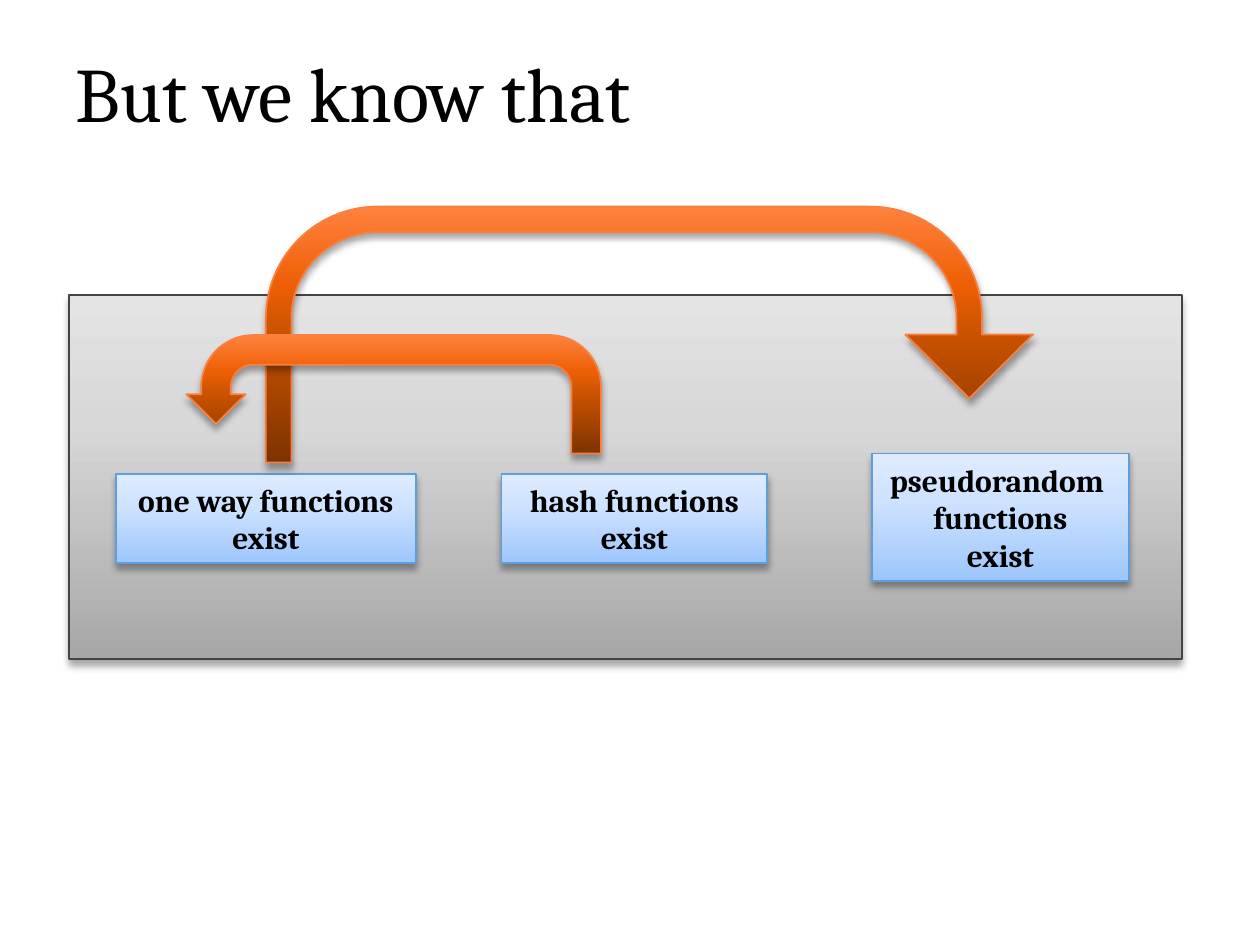
import dataclasses

import lxml.etree
import pptx
import pptx.dml.color
import pptx.enum.shapes
import pptx.enum.text
import pptx.oxml.ns
import pptx.util

Inches = pptx.util.Inches
Pt = pptx.util.Pt
Shape = pptx.enum.shapes.MSO_SHAPE
qn = pptx.oxml.ns.qn


@dataclasses.dataclass(frozen=True)
class Theme:
    font: str = "Cambria"
    title_size: int = 44
    label_size: int = 18
    text: str = "000000"
    shadow: str = "000000"
    panel: tuple = ("444444", ((0, "A7A7A7"), (65, "D8D8D8"), (100, "E4E4E4")))
    label: tuple = ("5F9EDD", ((0, "9DC6FB"), (65, "CFE3FF"), (100, "DEEBFF")))
    arrow: tuple = ("F88040", ((0, "7D3300"), (50, "CA5200"), (70, "EE6007"), (100, "FF823D")))


THEME = Theme()


def rgb(value):
    return pptx.dml.color.RGBColor.from_string(value)


def apply(target, values):
    for name, value in values.items():
        setattr(target, name, value)


def add_child(parent, tag, **attributes):
    child = lxml.etree.SubElement(parent, qn(tag))
    for name, value in attributes.items():
        child.set(name, str(value))
    return child


def fill_gradient(shape, stops):
    shape.fill.gradient()
    gradient = shape._element.spPr.find(qn("a:gradFill"))
    stop_list = gradient.find(qn("a:gsLst"))
    for stop in list(stop_list):
        stop_list.remove(stop)
    for position, color in stops:
        stop = add_child(stop_list, "a:gs", pos=position * 1000)
        add_child(stop, "a:srgbClr", val=color)
    gradient.find(qn("a:lin")).set("ang", str(270 * 60000))


def add_shadow(shape):
    shape.shadow.inherit = False
    effects = shape._element.spPr.find(qn("a:effectLst"))
    shadow = add_child(effects, "a:outerShdw", blurRad=Pt(4), dist=Pt(3),
                       dir=90 * 60000, rotWithShape=0)
    color = add_child(shadow, "a:srgbClr", val=THEME.shadow)
    add_child(color, "a:alpha", val=35000)


def add_glossy_shape(page, kind, bounds, style):
    line_color, stops = style
    shape = page.shapes.add_shape(kind, *map(Inches, bounds))
    fill_gradient(shape, stops)
    shape.line.color.rgb = rgb(line_color)
    shape.line.width = Pt(1)
    add_shadow(shape)
    return shape


def write_text(box, text, size, bold, frame_format, para_format):
    apply(box.text_frame, frame_format)
    para = box.text_frame.paragraphs[0]
    para.text = text
    apply(para, para_format)
    for span in para.runs:
        apply(span.font, {"name": THEME.font, "size": Pt(size), "bold": bold})
        span.font.color.rgb = rgb(THEME.text)


def set_title(page, text):
    title = page.shapes.title
    apply(title, {"left": Inches(0.5), "top": Inches(0.3),
                  "width": Inches(9), "height": Inches(0.95)})
    write_text(title, text, THEME.title_size, False,
               {"vertical_anchor": pptx.enum.text.MSO_ANCHOR.MIDDLE,
                "auto_size": pptx.enum.text.MSO_AUTO_SIZE.NONE},
               {"alignment": pptx.enum.text.PP_ALIGN.LEFT, "line_spacing": 0.9})


def add_label(page, text, bounds):
    box = add_glossy_shape(page, Shape.RECTANGLE, bounds, THEME.label)
    write_text(box, text, THEME.label_size, True,
               {"word_wrap": True,
                "auto_size": pptx.enum.text.MSO_AUTO_SIZE.SHAPE_TO_FIT_TEXT},
               {"alignment": pptx.enum.text.PP_ALIGN.CENTER})


def add_uturn_arrow(page, bounds, shaft, flipped=False):
    arrow = add_glossy_shape(page, Shape.U_TURN_ARROW, bounds, THEME.arrow)
    for index, value in enumerate((shaft, 0.25, 0.25, 0.4375, 0.75)):
        arrow.adjustments[index] = value
    if flipped:
        arrow._element.spPr.find(qn("a:xfrm")).set("flipH", "1")


def main():
    deck = pptx.Presentation()
    apply(deck, {"slide_width": Inches(10), "slide_height": Inches(7.5)})
    page = deck.slides.add_slide(deck.slide_layouts[5])

    set_title(page, "But we know that")
    add_glossy_shape(page, Shape.RECTANGLE, (0.55, 2.34, 8.83, 2.89), THEME.panel)
    add_label(page, "one way functions\nexist", (0.92, 3.76, 2.38, 0.71))
    add_label(page, "hash functions\nexist", (3.98, 3.76, 2.11, 0.71))
    add_label(page, "pseudorandom \nfunctions\nexist", (6.92, 3.6, 2.04, 1.01))
    add_uturn_arrow(page, (2.11, 1.64, 6.09, 2.03), shaft=0.1)
    add_uturn_arrow(page, (1.48, 2.66, 3.29, 0.94), shaft=0.25, flipped=True)

    deck.save("out.pptx")


if __name__ == "__main__":
    main()
